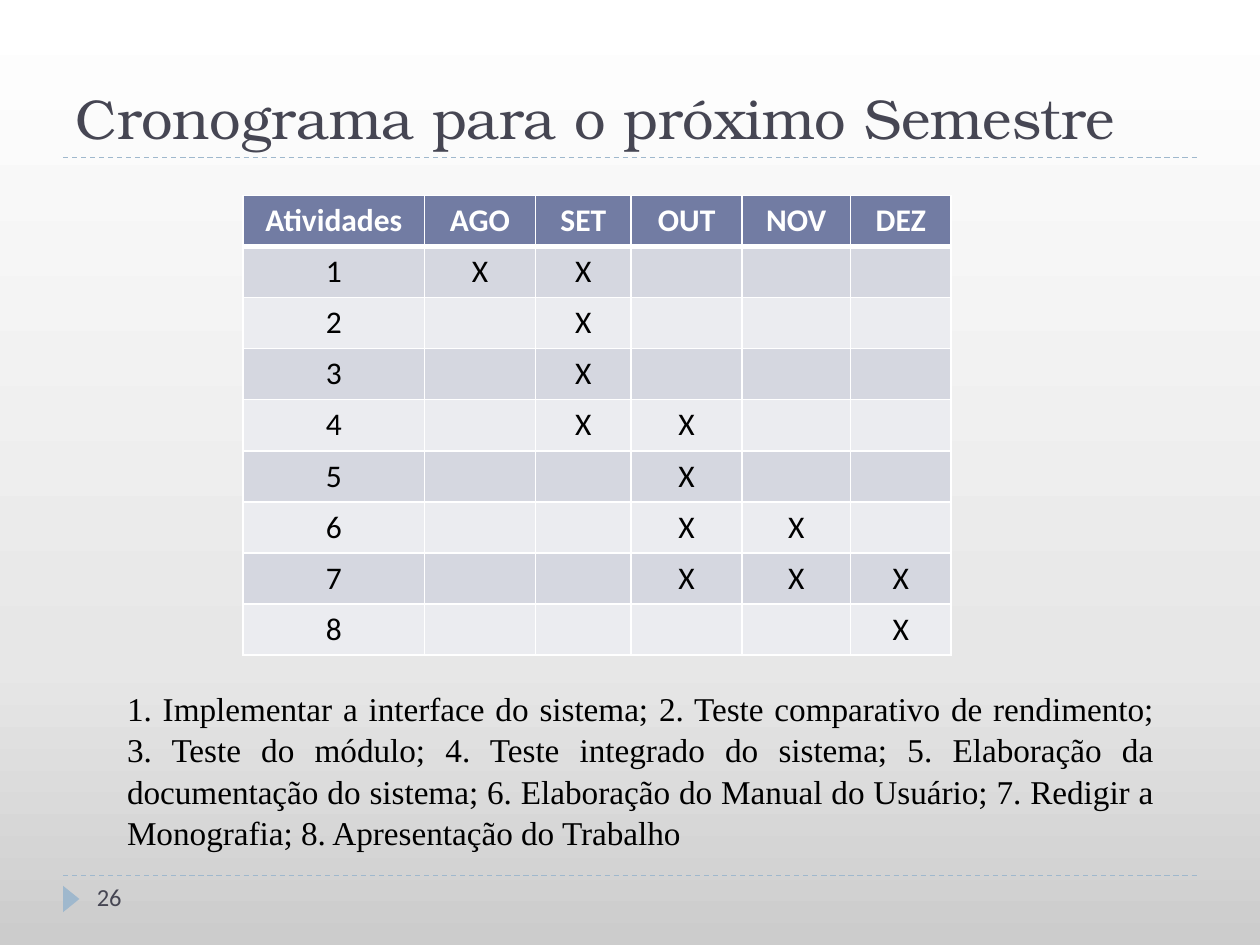
from copy import deepcopy
from typing import NamedTuple

from lxml import etree
from pptx import Presentation
from pptx import util as u
from pptx.dml.color import RGBColor
from pptx.enum import dml, shapes, text
from pptx.oxml.ns import qn

WHITE = RGBColor(0xFF, 0xFF, 0xFF)
BLACK = RGBColor(0x00, 0x00, 0x00)
SLATE = RGBColor(0x46, 0x46, 0x53)
SKY = RGBColor(0x9F, 0xB8, 0xCD)
HEADER = RGBColor(0x72, 0x7C, 0xA3)
BANDS = (RGBColor(0xD5, 0xD7, 0xE0), RGBColor(0xEB, 0xEC, 0xF0))
BACKDROP = ((0, RGBColor(0xCC, 0xCC, 0xCC)), (0.3, RGBColor(0xE7, 0xE7, 0xE7)), (1, WHITE))

MONTHS = ("AGO", "SET", "OUT", "NOV", "DEZ")
COLUMN_WIDTHS = (1.44, 0.88, 0.76, 0.88, 0.86, 0.8)
TABLE_HEIGHT = 3.65
LEGEND = (
    "1. Implementar a interface do sistema; 2. Teste comparativo de rendimento; "
    "3. Teste do módulo; 4. Teste integrado do sistema; "
    "5. Elaboração da documentação do sistema; 6. Elaboração do Manual do Usuário; "
    "7. Redigir a Monografia; 8. Apresentação do Trabalho"
)


class Activity(NamedTuple):
    number: int
    months: tuple[str, ...]


ACTIVITIES = (
    Activity(1, ("AGO", "SET")),
    Activity(2, ("SET",)),
    Activity(3, ("SET",)),
    Activity(4, ("SET", "OUT")),
    Activity(5, ("OUT",)),
    Activity(6, ("OUT", "NOV")),
    Activity(7, ("OUT", "NOV", "DEZ")),
    Activity(8, ("DEZ",)),
)


def write(frame, words: str, *, size: float, font: str = "Calibri", color=BLACK,
          bold: bool = False, align=text.PP_ALIGN.LEFT, spacing: float = 1.0) -> None:
    paragraph = frame.paragraphs[0]
    paragraph.alignment = align
    paragraph.line_spacing = spacing
    run = paragraph.add_run()
    run.text = words
    run.font.size, run.font.name, run.font.bold = u.Pt(size), font, bold
    run.font.color.rgb = color


def paint_background(slide) -> None:
    fill = slide.background.fill
    fill.gradient()
    fill.gradient_angle = 90
    stop_list = slide.element.find(".//" + qn("a:gsLst"))
    stop_list.append(deepcopy(stop_list[0]))
    for stop, (position, color) in zip(fill.gradient_stops, BACKDROP):
        stop.position = position
        stop.color.rgb = color


def draw_rule(slide, y: float) -> None:
    rule = slide.shapes.add_connector(
        shapes.MSO_CONNECTOR.STRAIGHT, u.Inches(0.5), u.Inches(y), u.Inches(9.5), u.Inches(y))
    rule.line.color.rgb = SKY
    rule.line.width = u.Pt(0.75)
    rule.line.dash_style = dml.MSO_LINE.DASH
    etree.SubElement(rule.element.spPr, qn("a:effectLst"))


def add_text_box(slide, left: float, top: float, width: float, height: float):
    frame = slide.shapes.add_textbox(*map(u.Inches, (left, top, width, height))).text_frame
    frame.word_wrap = True
    return frame


def border_cell(cell, bottom: float) -> None:
    properties = cell._tc.get_or_add_tcPr()
    sides = (("lnL", 1), ("lnR", 1), ("lnT", 1), ("lnB", bottom))
    for index, (side, points) in enumerate(sides):
        line = etree.Element(qn("a:" + side), w=str(u.Pt(points)))
        solid = etree.SubElement(line, qn("a:solidFill"))
        etree.SubElement(solid, qn("a:srgbClr"), val=str(WHITE))
        properties.insert(index, line)


def draw_schedule(slide) -> None:
    rows = [("Atividades", *MONTHS)]
    for activity in ACTIVITIES:
        marks = ("X" if month in activity.months else "" for month in MONTHS)
        rows.append((str(activity.number), *marks))
    table = slide.shapes.add_table(
        len(rows), len(COLUMN_WIDTHS), u.Inches(1.93), u.Inches(1.55),
        u.Inches(sum(COLUMN_WIDTHS)), u.Inches(TABLE_HEIGHT)).table
    for column, width in zip(table.columns, COLUMN_WIDTHS):
        column.width = u.Inches(width)
    for r, row in enumerate(rows):
        is_header = r == 0
        for c, words in enumerate(row):
            cell = table.cell(r, c)
            cell.fill.solid()
            cell.fill.fore_color.rgb = HEADER if is_header else BANDS[(r - 1) % 2]
            border_cell(cell, bottom=3 if is_header else 1)
            if words:
                write(cell.text_frame, words, size=18, bold=is_header,
                      color=WHITE if is_header else BLACK, align=text.PP_ALIGN.CENTER)


def main() -> None:
    deck = Presentation()
    deck.slide_width, deck.slide_height = u.Inches(10), u.Inches(7.5)
    slide = deck.slides.add_slide(deck.slide_layouts[5])
    paint_background(slide)

    # Rules and footer marker
    for y in (6.95, 1.25):
        draw_rule(slide, y)
    marker = slide.shapes.add_shape(
        shapes.MSO_SHAPE.ISOSCELES_TRIANGLE, *map(u.Inches, (0.46, 7.07, 0.21, 0.13)))
    marker.rotation = 90
    marker.shadow.inherit = False
    marker.fill.solid()
    marker.fill.fore_color.rgb = SKY
    marker.line.fill.background()

    # Title
    title = slide.shapes.title
    title.left, title.top, title.width, title.height = map(u.Inches, (0.5, 0.17, 9, 1.08))
    title.text_frame.vertical_anchor = text.MSO_ANCHOR.BOTTOM
    title.text_frame.auto_size = text.MSO_AUTO_SIZE.NONE
    write(title.text_frame, "Cronograma para o próximo Semestre",
          size=32, font="TeX Gyre Bonum", color=SLATE)

    # Page number, schedule and legend
    write(add_text_box(slide, 0.67, 6.95, 2.17, 0.4), "26", size=14, color=SLATE)
    draw_schedule(slide)
    legend = add_text_box(slide, 0.91, 5.4, 8.35, 1.38)
    legend.auto_size = text.MSO_AUTO_SIZE.SHAPE_TO_FIT_TEXT
    write(legend, LEGEND, size=19, font="Times New Roman",
          align=text.PP_ALIGN.JUSTIFY, spacing=1.04)

    deck.save("out.pptx")


if __name__ == "__main__":
    main()
